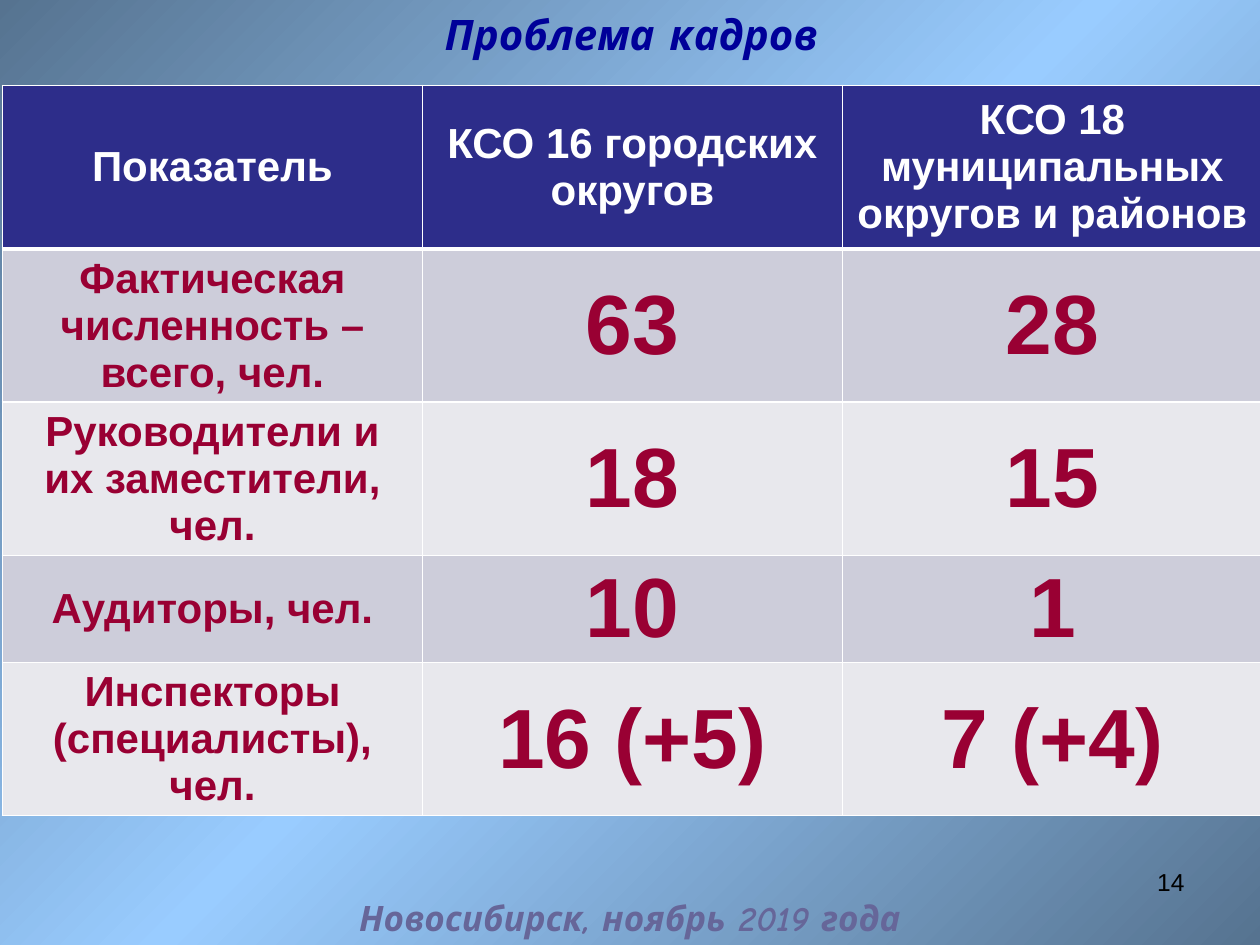
from copy import deepcopy

from lxml import etree
from pptx import Presentation
from pptx.dml.color import RGBColor
from pptx.enum.text import MSO_ANCHOR, MSO_AUTO_SIZE, PP_ALIGN
from pptx.oxml.ns import qn
from pptx.util import Cm, Pt

CENTER, RIGHT = PP_ALIGN.CENTER, PP_ALIGN.RIGHT
TOP, MIDDLE = MSO_ANCHOR.TOP, MSO_ANCHOR.MIDDLE
NO_AUTOFIT = MSO_AUTO_SIZE.NONE
TITLE_ONLY = 5

WIDTH, HEIGHT = 25.4, 19.05
BODY_FONT, ACCENT_FONT = "Arial", "Comic Neue"
WHITE, BLACK = "FFFFFF", "000000"
HEADER_FILL, BAND_FILLS = "2D2D8A", ("CDCDDA", "E8E8ED")
FIGURE_COLOR = "990033"
GRADIENT = ((0, "567390"), (0.5, "99CCFF"), (1, "567390"))

ROWS = (
    ("Показатель", "КСО 16 городских округов", "КСО 18 муниципальных округов и районов"),
    ("Фактическая численность –всего, чел.", "63", "28"),
    ("Руководители и их заместители, чел.", "18", "15"),
    ("Аудиторы, чел.", "10", "1"),
    ("Инспекторы (специалисты), чел.", "16 (+5)", "7 (+4)"),
)
ROW_HEIGHTS = (3.3, 3.08, 3.08, 2.16, 3.08)


def rgb(color):
    return RGBColor.from_string(color)


def set_text(tf, text, size, color, font=BODY_FONT, bold=False, italic=False,
             align=CENTER):
    p = tf.paragraphs[0]
    p.text = text
    p.alignment = align
    p.font.name, p.font.size = font, Pt(size)
    p.font.bold, p.font.italic = bold, italic
    p.font.color.rgb = rgb(color)


def fill_background(slide):
    fill = slide.background.fill
    fill.gradient()
    fill.gradient_angle = 315  # counter-clockwise: top left to bottom right
    stop_list = next(slide._element.iter(qn("a:gsLst")))
    stop_list.append(deepcopy(stop_list[0]))
    for stop, (position, color) in zip(fill.gradient_stops, GRADIENT):
        stop.position = position
        stop.color.rgb = rgb(color)


def place_text(sp, box, text, size, color, anchor=MIDDLE, **style):
    """Fit a text shape to box (left, top, width, height in cm) and fill it."""
    sp.left, sp.top, sp.width, sp.height = map(Cm, box)
    tf = sp.text_frame
    tf.word_wrap = True
    tf.auto_size = NO_AUTOFIT
    tf.vertical_anchor = anchor
    set_text(tf, text, size, color, **style)


def add_text(slide, box, *args, **style):
    place_text(slide.shapes.add_textbox(*map(Cm, box)), box, *args, **style)


def set_borders(cell, top, bottom):
    """Draw white cell borders; top and bottom are widths in points."""
    tc_pr = cell._tc.get_or_add_tcPr()
    widths = (("a:lnL", 1), ("a:lnR", 1), ("a:lnT", top), ("a:lnB", bottom))
    for i, (tag, width) in enumerate(widths):
        ln = etree.Element(qn(tag), w=str(Pt(width)))
        solid = etree.SubElement(ln, qn("a:solidFill"))
        etree.SubElement(solid, qn("a:srgbClr"), val=WHITE)
        tc_pr.insert(i, ln)


def add_staff_table(slide, left, top, width):
    n_cols = len(ROWS[0])
    table = slide.shapes.add_table(len(ROWS), n_cols, Cm(left), Cm(top),
                                   Cm(width), Cm(sum(ROW_HEIGHTS))).table
    table.horz_banding = False
    for column in table.columns:
        column.width = Cm(width / n_cols)
    for i, (texts, height) in enumerate(zip(ROWS, ROW_HEIGHTS)):
        table.rows[i].height = Cm(height)
        header = i == 0
        for j, text in enumerate(texts):
            cell = table.cell(i, j)
            cell.vertical_anchor = MIDDLE
            cell.fill.solid()
            cell.fill.fore_color.rgb = rgb(HEADER_FILL if header else BAND_FILLS[(i - 1) % 2])
            set_borders(cell, top=3 if i == 1 else 1, bottom=3 if header else 1)
            set_text(cell.text_frame, text, 24 if header or j == 0 else 48,
                     WHITE if header else FIGURE_COLOR, bold=True)


def main():
    prs = Presentation()
    prs.slide_width, prs.slide_height = Cm(WIDTH), Cm(HEIGHT)
    slide = prs.slides.add_slide(prs.slide_layouts[TITLE_ONLY])
    accent = {"font": ACCENT_FONT, "bold": True, "italic": True}

    fill_background(slide)
    add_text(slide, (18.2, 17.35, 5.93, 1.32), "14", 14, BLACK, anchor=TOP, align=RIGHT)
    add_staff_table(slide, 0.05, 1.72, WIDTH)
    add_text(slide, (0, 17.96, WIDTH, 1.09), "Новосибирск, ноябрь 2019 года",
             20, "666699", **accent)
    place_text(slide.shapes.title, (0.05, 0.05, 25.35, 1.27), "Проблема кадров",
               24, "000099", **accent)
    prs.save("out.pptx")


if __name__ == "__main__":
    main()
